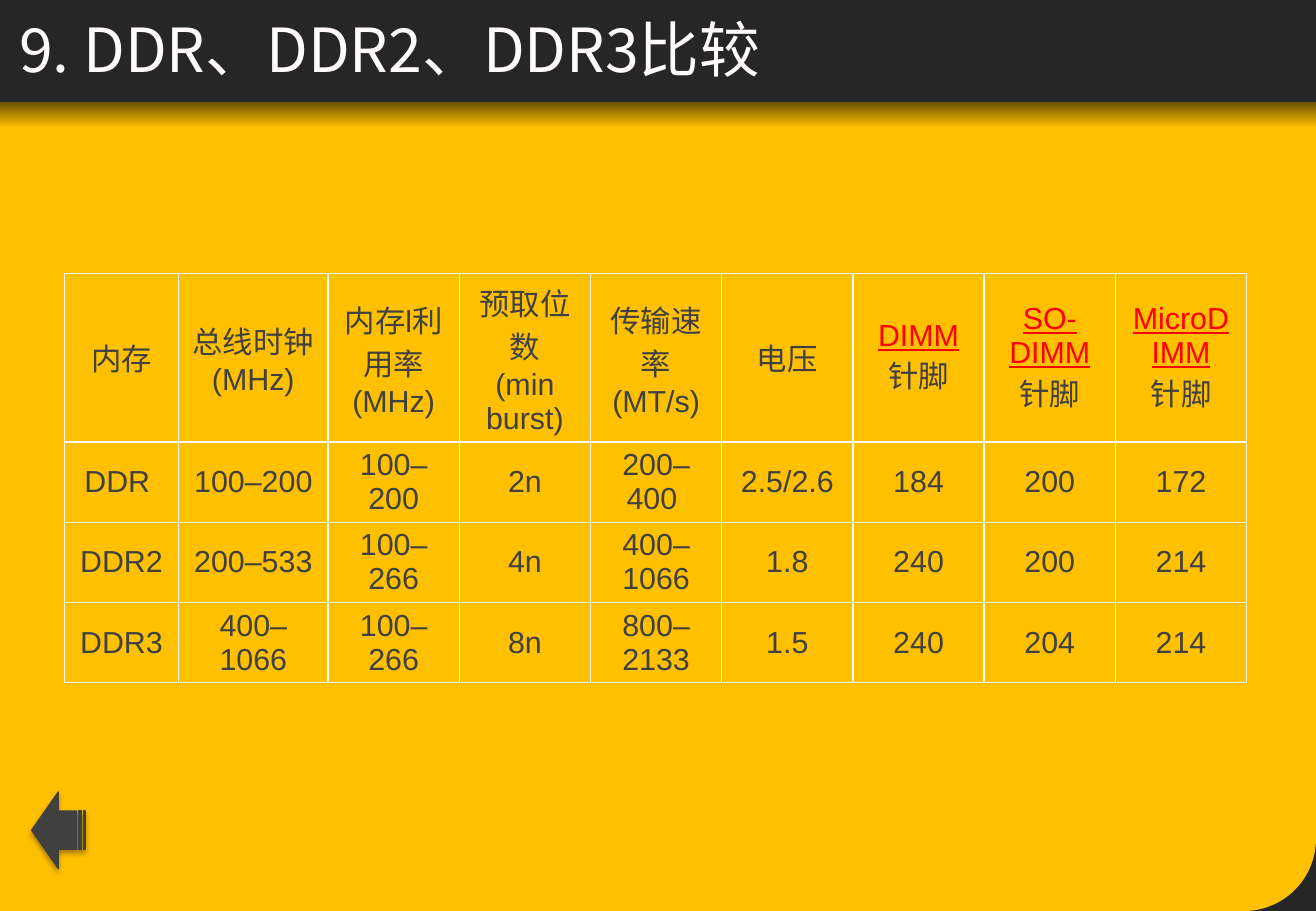
from lxml.etree import SubElement
from pptx import Presentation
from pptx.dml.color import RGBColor
from pptx.enum.shapes import MSO_SHAPE as Preset
from pptx.enum.text import MSO_ANCHOR as Anchor, PP_ALIGN as Align
from pptx.oxml.ns import qn
from pptx.util import Inches, Pt

WIDTH, HEIGHT = 10.83, 7.5
HEADER_HEIGHT = 0.84
COLORS = {"dark": "262626", "amber": "FFC000", "shade": "6B5100",
          "light": "FFFBFB", "gray": "404040", "red": "FF0000", "black": "000000"}
TITLE_FONT, TABLE_FONT = "Noto Sans CJK SC", "Arial"

COLUMN_WIDTHS = [0.94, 1.23] + [1.08] * 7
ROW_HEIGHTS = [1.39] + [0.66] * 3
LINKED_COLUMNS = (6, 7, 8)
# Some values end in a figure space (U+2007)
MEMORY_ROWS = [
    ["内存", "总线时钟\v(MHz)", "内存l利用率\v(MHz)", "预取位数\v(min burst)",
     "传输速率\v(MT/s)", "电压", "DIMM\v针脚", "SO-DIMM\v针脚", "MicroDIMM\v针脚"],
    ["DDR ", "100–200 ", "100–200", "2n", "200–400 ", "2.5/2.6", "184", "200", "172"],
    ["DDR2", "200–533 ", "100–266", "4n", "400–1066", "1.8", "240", "200", "214"],
    ["DDR3", "400–1066", "100–266", "8n", "800–2133", "1.5", "240", "204", "214"],
]


def color(name):
    return RGBColor.from_string(COLORS[name])


def add_panel(slide, preset, box, fill):
    shape = slide.shapes.add_shape(preset, *map(Inches, box))
    shape.shadow.inherit = False
    shape.fill.solid()
    shape.fill.fore_color.rgb = color(fill)
    shape.line.fill.background()
    return shape


def add_background(slide, box):
    left, top, width, height = box
    body = (left, top + HEADER_HEIGHT, width, height - HEADER_HEIGHT)
    add_panel(slide, Preset.RECTANGLE, body, "dark")
    # Amber body with a rounded lower right corner
    amber = add_panel(slide, Preset.ROUND_1_RECTANGLE, body, "amber")
    amber.adjustments[0] = 0.089
    amber.rotation = 180
    amber._element.spPr.find(qn("a:xfrm")).set("flipH", "1")
    # Soft shade below the header
    shade = add_panel(slide, Preset.RECTANGLE, (left, body[1], width, 0.21), "shade")
    shade.fill.gradient()
    shade.fill.gradient_angle = 270
    for stop, name, position in zip(shade.fill.gradient_stops, ("shade", "amber"), (0, 1)):
        stop.color.rgb = color(name)
        stop.position = position
    add_panel(slide, Preset.RECTANGLE, (left, top, width, HEADER_HEIGHT), "dark")


def add_title(slide, box, text):
    text_frame = slide.shapes.add_textbox(*map(Inches, box)).text_frame
    text_frame.word_wrap = True
    text_frame.vertical_anchor = Anchor.MIDDLE
    text_frame.text = text
    run = text_frame.paragraphs[0].runs[0]
    run.font.size = Pt(36)
    run.font.name = TITLE_FONT
    run.font.color.rgb = color("light")
    SubElement(run.font._element, qn("a:ea"), typeface=TITLE_FONT)


def add_borders(cell):
    properties = cell._tc.get_or_add_tcPr()
    for side in ("lnL", "lnR", "lnT", "lnB"):
        line = SubElement(properties, qn(f"a:{side}"), w=str(Pt(1)))
        fill = SubElement(line, qn("a:solidFill"))
        SubElement(fill, qn("a:srgbClr"), val=COLORS["light"])


def format_cell(cell, text, linked):
    add_borders(cell)
    cell.fill.solid()
    cell.fill.fore_color.rgb = color("amber")
    cell.vertical_anchor = Anchor.MIDDLE
    cell.margin_left = cell.margin_right = Inches(0.11)
    paragraph = cell.text_frame.paragraphs[0]
    paragraph.text = text
    paragraph.alignment = Align.CENTER
    for index, run in enumerate(paragraph.runs):
        highlighted = linked and index == 0
        run.font.size = Pt(18)
        run.font.name = TABLE_FONT
        run.font.bold = False
        run.font.underline = highlighted
        run.font.color.rgb = color("red" if highlighted else "gray")


def add_memory_table(slide, left, top):
    table = slide.shapes.add_table(
        len(ROW_HEIGHTS), len(COLUMN_WIDTHS), Inches(left), Inches(top),
        Inches(sum(COLUMN_WIDTHS)), Inches(sum(ROW_HEIGHTS))).table
    table.first_row = table.horz_banding = False
    for column, width in zip(table.columns, COLUMN_WIDTHS):
        column.width = Inches(width)
    for row_index, values in enumerate(MEMORY_ROWS):
        table.rows[row_index].height = Inches(ROW_HEIGHTS[row_index])
        for column_index, text in enumerate(values):
            linked = row_index == 0 and column_index in LINKED_COLUMNS
            format_cell(table.cell(row_index, column_index), text, linked)


def add_back_arrow(slide, box):
    arrow = add_panel(slide, Preset.STRIPED_RIGHT_ARROW, box, "gray")
    arrow.rotation = 180
    arrow.line.color.rgb = color("gray")
    arrow.line.width = Pt(0.75)
    # Soft shadow below the arrow
    effects = arrow._element.spPr.find(qn("a:effectLst"))
    shadow = SubElement(effects, qn("a:outerShdw"), blurRad=str(Pt(3.1)),
                        dist=str(Pt(1.8)), dir="5400000", rotWithShape="0")
    shadow_color = SubElement(shadow, qn("a:srgbClr"), val=COLORS["black"])
    SubElement(shadow_color, qn("a:alpha"), val="35000")


def main():
    presentation = Presentation()
    presentation.slide_width = Inches(WIDTH)
    presentation.slide_height = Inches(HEIGHT)
    slide = presentation.slides.add_slide(presentation.slide_layouts[6])
    slide.background.fill.solid()
    slide.background.fill.fore_color.rgb = color("light")
    add_background(slide, (0, 0, WIDTH, HEIGHT))
    add_memory_table(slide, 0.53, 2.25)
    add_title(slide, (0.06, -0.11, 9.75, 1.01), "9. DDR、DDR2、DDR3比较")
    add_back_arrow(slide, (0.26, 6.52, 0.44, 0.63))
    presentation.save("out.pptx")


if __name__ == "__main__":
    main()
